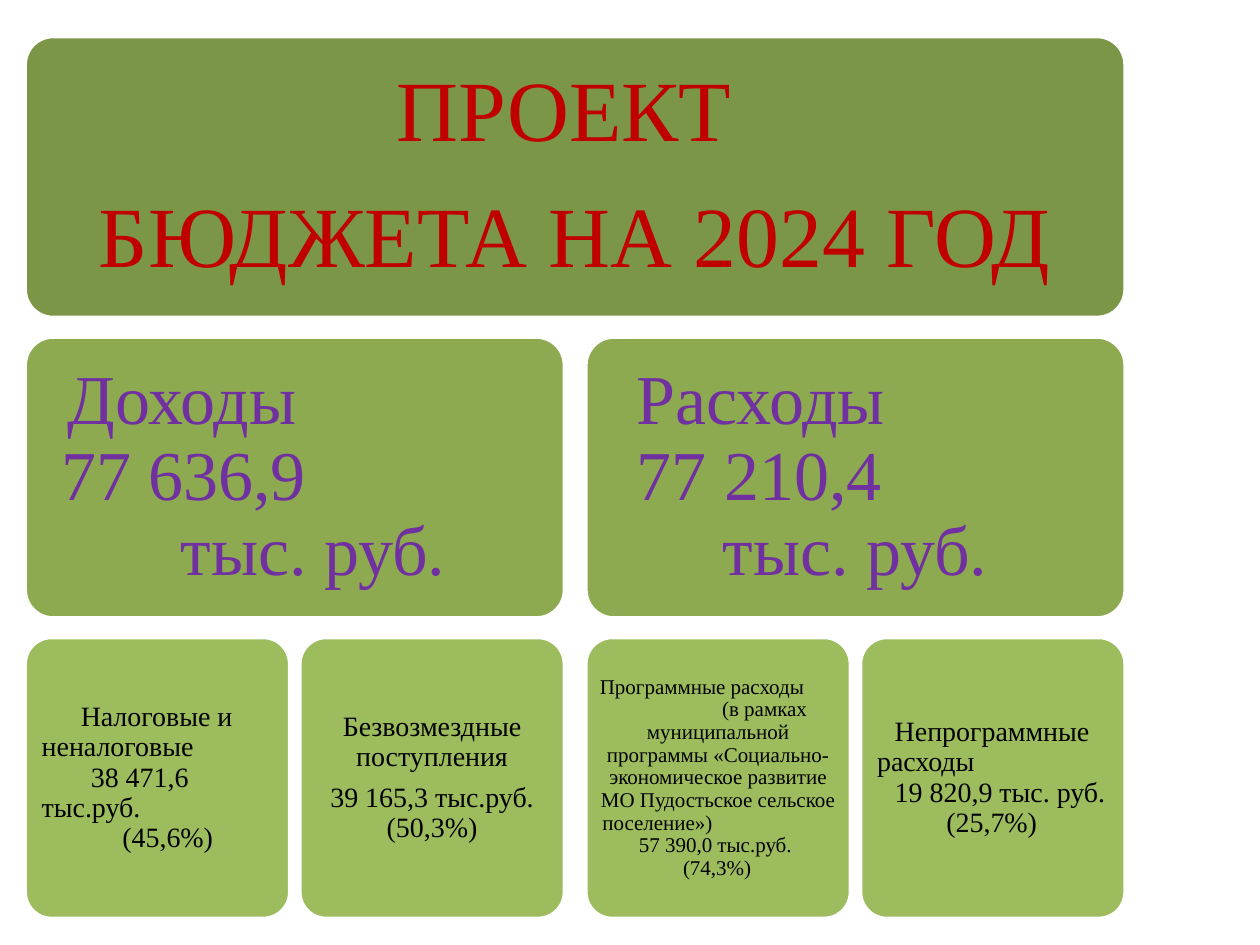
from pptx import Presentation
from pptx.dml.color import RGBColor
from pptx.enum.shapes import MSO_SHAPE as Shape
from pptx.enum.text import MSO_ANCHOR as Anchor, MSO_AUTO_SIZE as AutoSize, PP_ALIGN as Align
from pptx.util import Inches, Pt

FONT = "Times New Roman"
CENTER = None

TITLE = [(CENTER, "ПРОЕКТ "), (CENTER, "БЮДЖЕТА НА 2024 ГОД")]
TOTALS = [
    [(0.1, "Доходы"), (0.05, "77 636,9"), (1.0, "тыс. руб.")],
    [(0.17, "Расходы"), (0.17, "77 210,4"), (0.85, "тыс. руб.")],
]
PARTS = [
    dict(lines=[(0.31, "Налоговые и"), (0, "неналоговые"), (0.39, "38 471,6"),
                (0, "тыс.руб."), (0.64, "(45,6%)")]),
    dict(lines=[(CENTER, "Безвозмездные поступления"),
                (CENTER, "39 165,3 тыс.руб. (50,3%)")], gap=6),
    dict(lines=[(0, "Программные расходы"), (0.97, "(в рамках"),
                (CENTER, "муниципальной программы «Социально-экономическое развитие "
                         "МО Пудостьское сельское"),
                (0.02, "поселение»)"), (0.31, "57 390,0 тыс.руб."), (0.66, "(74,3%)")],
         size=12, inset=0.05),
    dict(lines=[(0.14, "Непрограммные"), (0, "расходы"),
                (0.14, "19 820,9 тыс. руб."), (0.55, "(25,7%)")]),
]

LEFT, TOP, ROW_PITCH, CARD_HEIGHT = 0.2, 0.29, 2.385, 2.23
FULL_WIDTH, HALF_WIDTH, QUARTER_WIDTH = 8.73, 4.28, 2.1
HALF_PITCH, QUARTER_PITCH = 4.45, 2.18


def color(value):
    return RGBColor.from_string(value)


def write(shape, lines, size=16, font_color="000000", inset=0.07, gap=0):
    frame = shape.text_frame
    frame.word_wrap = True
    frame.auto_size = AutoSize.NONE
    frame.vertical_anchor = Anchor.MIDDLE
    frame.margin_left = frame.margin_right = Inches(inset)
    frame.margin_top = frame.margin_bottom = Inches(inset)
    for index, (indent, text) in enumerate(lines):
        paragraph = frame.add_paragraph() if index else frame.paragraphs[0]
        paragraph.line_spacing = 0.9
        paragraph.space_before = Pt(gap if index else 0)
        paragraph.alignment = Align.CENTER if indent is CENTER else Align.LEFT
        if indent:
            paragraph._p.get_or_add_pPr().set("marL", str(Inches(indent)))
        run = paragraph.add_run()
        run.text = text
        run.font.name = FONT
        run.font.size = Pt(size)
        run.font.color.rgb = color(font_color)


def add_card(slide, row, left, width, fill):
    card = slide.shapes.add_shape(
        Shape.ROUNDED_RECTANGLE, Inches(left), Inches(TOP + row * ROW_PITCH),
        Inches(width), Inches(CARD_HEIGHT))
    card.adjustments[0] = 0.1
    card.shadow.inherit = False
    card.fill.solid()
    card.fill.fore_color.rgb = color(fill)
    card.line.color.rgb = color("FFFFFF")
    card.line.width = Pt(2)
    return card


def main():
    presentation = Presentation()
    presentation.slide_width, presentation.slide_height = Inches(10), Inches(7.5)
    slide = presentation.slides.add_slide(presentation.slide_layouts[5])

    add_card(slide, 0, LEFT, FULL_WIDTH, "7C9647")
    title = slide.shapes.title
    title.left, title.top = Inches(0.26), Inches(0.35)
    title.width, title.height = Inches(8.6), Inches(2.1)
    write(title, TITLE, size=49, font_color="C00000", inset=0.2, gap=19)
    slide.shapes._spTree.append(title._element)

    for half, lines in enumerate(TOTALS):
        card = add_card(slide, 1, LEFT + half * HALF_PITCH, HALF_WIDTH, "8DAA51")
        write(card, lines, size=40, font_color="7030A0", inset=0.17)

    for index, part in enumerate(PARTS):
        half, quarter = divmod(index, 2)
        left = LEFT + half * HALF_PITCH + quarter * QUARTER_PITCH
        write(add_card(slide, 2, left, QUARTER_WIDTH, "9CBC5D"), **part)

    presentation.save("out.pptx")


if __name__ == "__main__":
    main()
